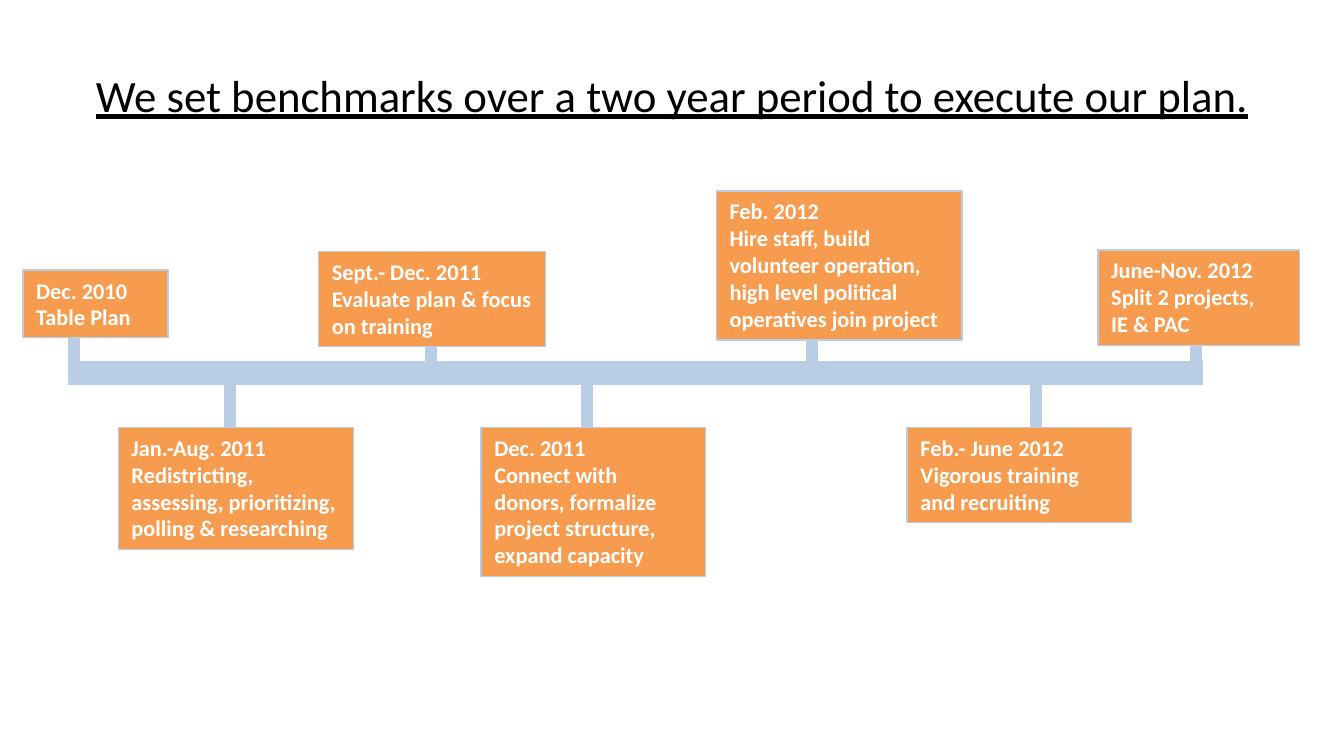
import dataclasses

import pptx
import pptx.dml.color
import pptx.enum.shapes
import pptx.enum.text
import pptx.util

Inches = pptx.util.Inches
ALIGN = pptx.enum.text.PP_ALIGN
ANCHOR = pptx.enum.text.MSO_ANCHOR
AUTO_SIZE = pptx.enum.text.MSO_AUTO_SIZE


@dataclasses.dataclass(frozen=True)
class Theme:
    font: str = "Calibri"
    title_size: float = 24
    label_size: float = 12
    title_color: str = "000000"
    label_color: str = "FFFFFF"
    box_color: str = "F79B4F"
    bar_color: str = "B9CDE5"
    line_width: float = 0.75


def rgb(value):
    return pptx.dml.color.RGBColor.from_string(value)


def write(frame, text, *, font, size, color, bold=False, underline=False,
          align=ALIGN.LEFT, anchor=ANCHOR.TOP, auto_size=AUTO_SIZE.NONE):
    """Fill a text frame, making one paragraph of each line of text."""
    frame.word_wrap = True
    frame.auto_size = auto_size
    frame.vertical_anchor = anchor
    frame.text = text
    for para in frame.paragraphs:
        para.alignment = align
        for span in para.runs:
            span.font.name = font
            span.font.size = pptx.util.Pt(size)
            span.font.color.rgb = rgb(color)
            span.font.bold = bold
            span.font.underline = underline


class TimelineSlide:
    def __init__(self, deck, theme):
        self.theme = theme
        self.slide = deck.slides.add_slide(deck.slide_layouts[5])

    def title(self, text, left, top, width, height):
        title = self.slide.shapes.title
        title.left, title.top = Inches(left), Inches(top)
        title.width, title.height = Inches(width), Inches(height)
        write(title.text_frame, text, font=self.theme.font,
              size=self.theme.title_size, color=self.theme.title_color,
              underline=True, align=ALIGN.CENTER, anchor=ANCHOR.MIDDLE)

    def rectangle(self, left, top, width, height, color):
        shape = self.slide.shapes.add_shape(
            pptx.enum.shapes.MSO_SHAPE.RECTANGLE,
            Inches(left), Inches(top), Inches(width), Inches(height))
        shape.shadow.inherit = False
        shape.fill.solid()
        shape.fill.fore_color.rgb = rgb(color)
        shape.line.color.rgb = rgb(self.theme.bar_color)
        shape.line.width = pptx.util.Pt(self.theme.line_width)
        return shape

    def bar(self, left, top, width, height):
        self.rectangle(left, top, width, height, self.theme.bar_color)

    def milestone(self, text, left, top, width, height):
        box = self.rectangle(left, top, width, height, self.theme.box_color)
        write(box.text_frame, text, font=self.theme.font,
              size=self.theme.label_size, color=self.theme.label_color,
              bold=True, auto_size=AUTO_SIZE.SHAPE_TO_FIT_TEXT)


STEM_WIDTH, STEM_HEIGHT = 0.08, 0.33
FIRST_STEM_TOP, UPPER_STEM_TOP, LOWER_STEM_TOP = 2.38, 2.4, 2.85
LOWER_BOX_TOP = LOWER_STEM_TOP + STEM_HEIGHT

# Each milestone: stem left, stem top, box (left, top, width, height), text
MILESTONES = [
    (0.51, FIRST_STEM_TOP, (0.17, 2.01, 1.08, 0.5), "Dec. 2010 Table Plan"),
    (1.67, LOWER_STEM_TOP, (0.88, LOWER_BOX_TOP, 1.75, 0.91),
     "Jan.-Aug. 2011\nRedistricting, assessing, prioritizing, polling & researching"),
    (3.17, UPPER_STEM_TOP, (2.37, 1.87, 1.69, 0.71),
     "Sept.- Dec. 2011\nEvaluate plan & focus on training"),
    (4.33, LOWER_STEM_TOP, (3.58, LOWER_BOX_TOP, 1.67, 1.11),
     "Dec. 2011\nConnect with donors, formalize project structure, expand capacity"),
    (6, UPPER_STEM_TOP, (5.33, 1.42, 1.83, 1.11),
     "Feb. 2012\nHire staff, build volunteer operation, high level political "
     "operatives join project"),
    (7.67, LOWER_STEM_TOP, (6.75, LOWER_BOX_TOP, 1.67, 0.71),
     "Feb.- June 2012\nVigorous training and recruiting"),
    (8.86, UPPER_STEM_TOP, (8.17, 1.86, 1.5, 0.71),
     "June-Nov. 2012\nSplit 2 projects,\nIE & PAC"),
]


def main():
    deck = pptx.Presentation()
    deck.slide_width = Inches(10)
    deck.slide_height = deck.slide_width * 9 // 16
    page = TimelineSlide(deck, Theme())
    page.title("We set benchmarks over a two year period to execute our plan.",
               0.5, 0.23, 9, 0.94)
    page.bar(0.51, 2.69, 8.44, 0.17)
    for stem_left, stem_top, box, text in MILESTONES:
        page.bar(stem_left, stem_top, STEM_WIDTH, STEM_HEIGHT)
        page.milestone(text, *box)
    deck.save("out.pptx")


if __name__ == "__main__":
    main()
